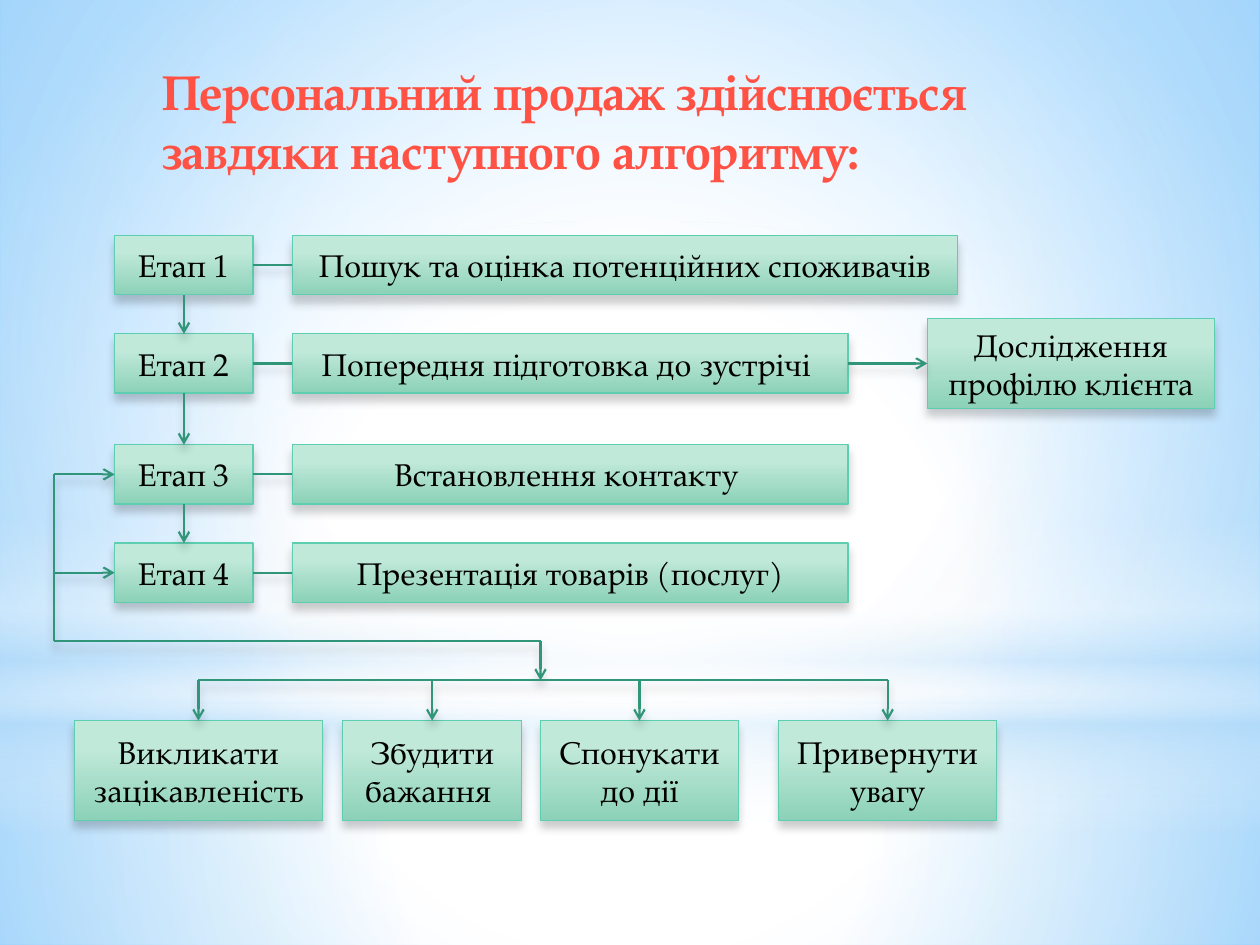
from pptx import Presentation
from pptx.dml.color import RGBColor
from pptx.enum.shapes import MSO_CONNECTOR as Link, MSO_SHAPE as Kind
from pptx.enum.text import MSO_ANCHOR as Anchor, PP_ALIGN as Align
from pptx.oxml import parse_xml
from pptx.oxml.ns import nsdecls
from pptx.util import Inches, Pt

FONT = "TeX Gyre Pagella"
RED = RGBColor(0xFF, 0x52, 0x44)
BLACK = RGBColor(0, 0, 0)
EDGE = RGBColor(0x5D, 0xCE, 0xAF)
GREEN = RGBColor(0x31, 0x95, 0x7A)
WHITE = RGBColor(0xFF, 0xFF, 0xFF)
SKY = RGBColor(0x63, 0xBC, 0xFF)
PALE = RGBColor(0xB4, 0xDC, 0xFA)
MINT = RGBColor(0xC0, 0xE9, 0xDA)
SAGE = RGBColor(0x8C, 0xD1, 0xB8)


def blend(stops, focus=None):
    """Gradient of (position, colour, opacity): round a focus, or downwards."""
    marks = "".join(
        f'<a:gs pos="{pos * 1000}"><a:srgbClr val="{tint}">'
        f'<a:alpha val="{alpha * 1000}"/></a:srgbClr></a:gs>'
        for pos, tint, alpha in stops)
    way = '<a:lin ang="5400000" scaled="0"/>'
    if focus:
        sides = " ".join(f'{s}="{v * 1000}"' for s, v in zip("ltrb", focus))
        way = f'<a:path path="circle"><a:fillToRect {sides}/></a:path>'
    return parse_xml(f'<a:gradFill {nsdecls("a")} rotWithShape="1">'
                     f'<a:gsLst>{marks}</a:gsLst>{way}</a:gradFill>')


def shade(item):
    """Soft shadow below a box or a line."""
    item._element.spPr.append(parse_xml(
        f'<a:effectLst {nsdecls("a")}><a:outerShdw blurRad="{Pt(5)}" '
        f'dist="{Pt(4)}" dir="5400000" rotWithShape="0"><a:srgbClr val="{BLACK}">'
        '<a:alpha val="20000"/></a:srgbClr></a:outerShdw></a:effectLst>'))


deck = Presentation()
deck.slide_width, deck.slide_height = Inches(10), Inches(7.5)
slide = deck.slides.add_slide(deck.slide_layouts[6])
shapes = slide.shapes

# Background
back = parse_xml(f'<p:bg {nsdecls("p", "a")}><p:bgPr><a:effectLst/></p:bgPr></p:bg>')
back[0].insert(0, blend([(0, WHITE, 100), (42, WHITE, 100), (100, SKY, 100)],
                        (24, 44, 24, 12)))
slide.element.cSld.insert(0, back)

# Light veils over the background
mid = (50, 50, 50, 50)
veils = [
    (Kind.RECTANGLE, 5.58, 1.92, mid,
     [(0, WHITE, 91), (37, WHITE, 76), (100, PALE, 79)]),
    (Kind.RECTANGLE, 0, 5.58, mid,
     [(0, WHITE, 89), (48, WHITE, 62), (100, PALE, 79)]),
    (Kind.RECTANGLE, 4.12, 2.5, None,
     [(0, WHITE, 0), (29, WHITE, 30), (45, PALE, 40),
      (55, WHITE, 26), (65, PALE, 60), (100, WHITE, 0)]),
    (Kind.OVAL, 1.75, 5.58, mid, [(0, WHITE, 100), (56, WHITE, 0)]),
]
for kind, top, high, focus, stops in veils:
    veil = shapes.add_shape(kind, 0, Inches(top), Inches(10), Inches(high))
    veil.shadow.inherit = False
    veil.line.fill.background()
    veil._element.spPr.insert(2, blend(stops, focus))

# Title
title = shapes.add_textbox(Inches(1.14), Inches(0.44), Inches(8.08), Inches(1.18))
title.text_frame.word_wrap = True
para = title.text_frame.paragraphs[0]
para._p.get_or_add_pPr().set("marL", str(Inches(0.05)))
para.space_before, para.space_after = Pt(5.6), Pt(3)
run = para.add_run()
run.text = "Персональний продаж здійснюється завдяки наступного алгоритму:"
run.font.name, run.font.size, run.font.bold = FONT, Pt(28), True
run.font.color.rgb = RED

# Boxes: the stages with their content, the side note, the aims
high = 0.47
stages = [
    (1.87, 5.28, "Пошук та оцінка потенційних споживачів"),
    (2.65, 4.41, "Попередня підготовка до зустрічі "),
    (3.53, 4.41, "Встановлення контакту "),
    (4.31, 4.41, "Презентація товарів (послуг)"),
]
aims = [
    (0.59, 1.97, "Викликати зацікавленість"),
    (2.72, 1.42, "Збудити бажання "),
    (4.29, 1.57, "Спонукати до дії"),
    (6.18, 1.73, "Привернути увагу"),
]
boxes = [(7.36, 2.53, 2.28, 0.71, "Дослідження профілю клієнта")]
for num, (top, wide, text) in enumerate(stages, 1):
    boxes.append((0.91, top, 1.1, high, f"Етап {num}"))
    boxes.append((2.32, top, wide, high, text))
for left, wide, text in aims:
    boxes.append((left, 5.72, wide, 0.79, text))

for *place, text in boxes:
    box = shapes.add_shape(Kind.RECTANGLE, *map(Inches, place))
    box._element.spPr.insert(2, blend([(28, MINT, 100), (100, SAGE, 100)]))
    box.line.color.rgb, box.line.width = EDGE, Pt(0.75)
    shade(box)
    frame = box.text_frame
    frame.word_wrap, frame.vertical_anchor = True, Anchor.MIDDLE
    para = frame.paragraphs[0]
    para.alignment = Align.CENTER
    run = para.add_run()
    run.text = text
    run.font.name, run.font.size = FONT, Pt(18)
    run.font.color.rgb = BLACK

# Lines: x1, y1, x2, y2, arrow
tops = [stage[0] for stage in stages]
mids = [top + high / 2 for top in tops]
lines = [(2.01, y, 2.32, y, False) for y in mids]
lines += [(1.46, a + high, 1.46, b, True) for a, b in zip(tops, tops[1:])]
lines += [(0.43, y, 0.91, y, True) for y in mids[2:]]
lines += [
    (6.73, mids[1], 7.36, mids[1], True),
    (0.43, mids[2], 0.43, 5.09, False),
    (0.43, 5.09, 4.29, 5.09, False),
    (4.29, 5.09, 4.29, 5.4, True),
    (1.57, 5.4, 7.05, 5.4, False),
]
for left, wide, text in aims:
    x = left + wide / 2
    lines.append((x, 5.4, x, 5.72, True))

for *ends, arrow in lines:
    line = shapes.add_connector(Link.STRAIGHT, *map(Inches, ends))
    line.line.color.rgb, line.line.width = GREEN, Pt(1.25)
    if arrow:
        line.line._get_or_add_ln().append(
            parse_xml(f'<a:tailEnd {nsdecls("a")} type="arrow"/>'))
    shade(line)

deck.save("out.pptx")
